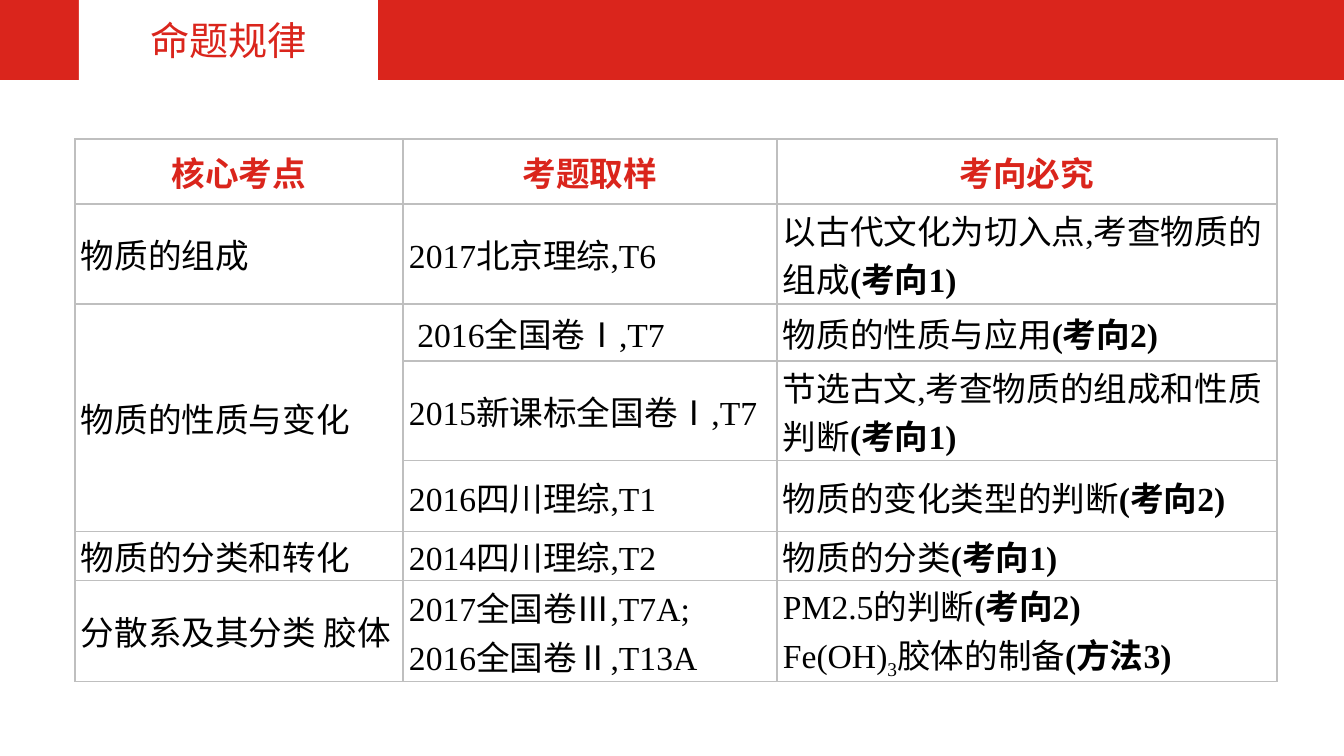
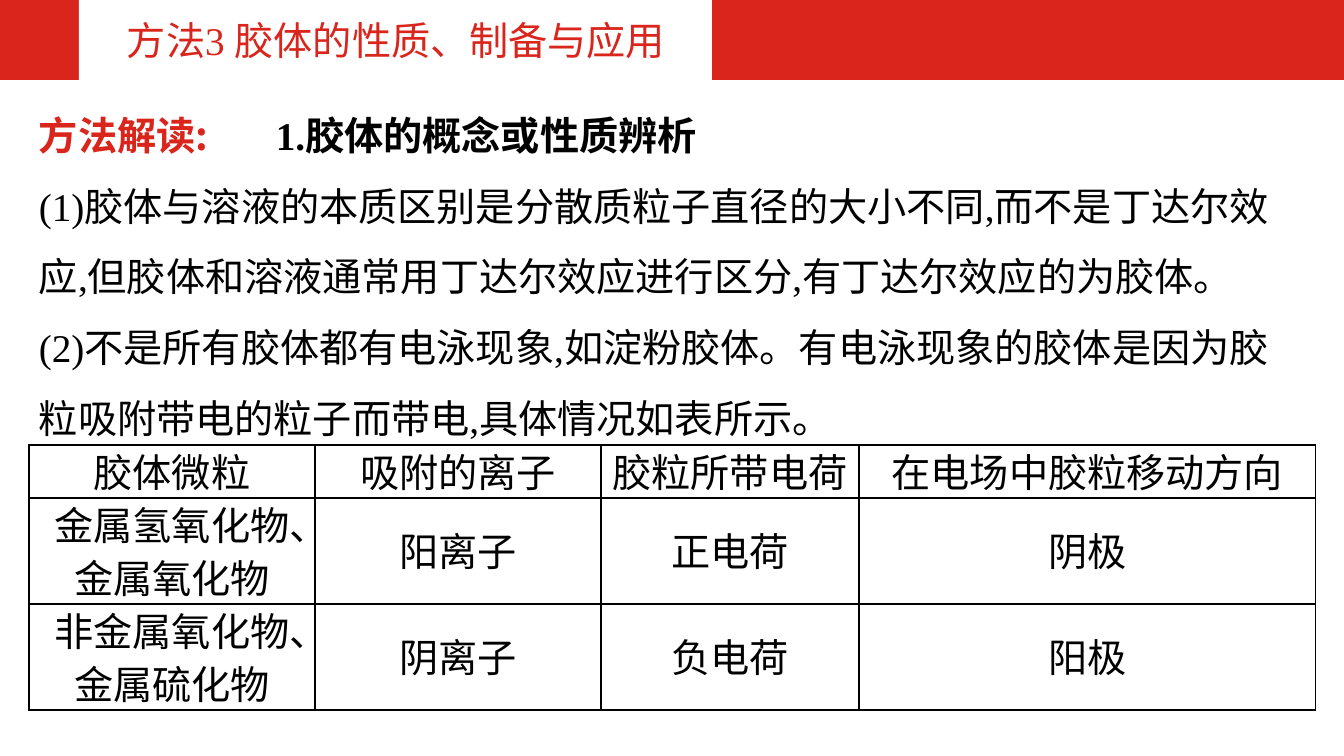
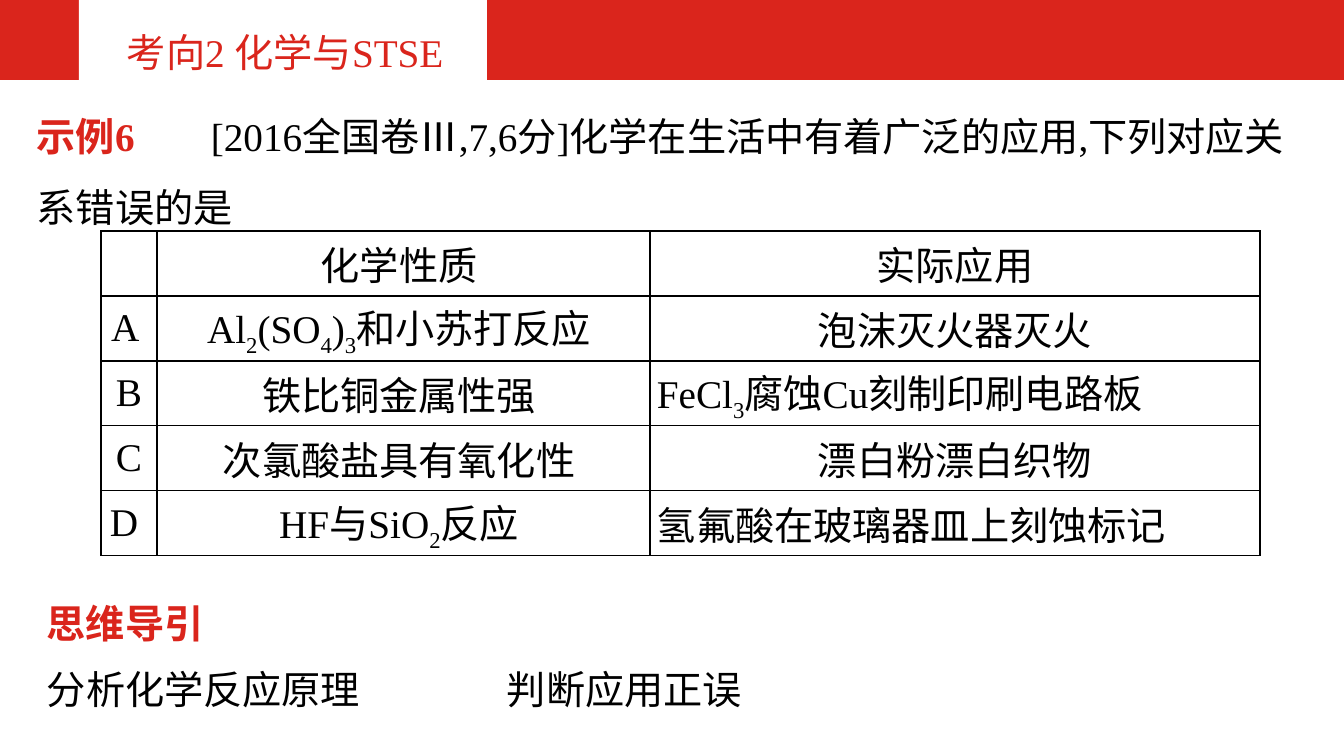
import itertools
import pptx
import pptx.util
import pptx.dml.color
import pptx.enum.shapes
import pptx.enum.text
import pptx.oxml
import pptx.oxml.ns

RED = pptx.dml.color.RGBColor(0xDA, 0x25, 0x1C)
WHITE = pptx.dml.color.RGBColor(0xFF, 0xFF, 0xFF)
BLACK = pptx.dml.color.RGBColor(0, 0, 0)
GRAY = pptx.dml.color.RGBColor(0xBF, 0xBF, 0xBF)
SERIF, SANS = "Times New Roman", "Noto Sans CJK SC"
WIDE, HIGH, BAND, TAB = 1344, 756, 80, 79
SCALE = 12192000 / WIDE
ALIGN = pptx.enum.text.PP_ALIGN
MID = pptx.enum.text.MSO_ANCHOR.MIDDLE

# Content. Marks in text: * bold, ^ red, ~ subscript, # sans font.
TOPICS = [
    ["#^*核心考点*^#", "#^*考题取样*^#", "#^*考向必究*^#"],
    ["物质的组成", "2017北京理综,T6", "以古代文化为切入点,考查物质的组成*(考向1)*"],
    ["物质的性质与变化", " 2016全国卷Ⅰ,T7", "物质的性质与应用*(考向2)*"],
    [None, "2015新课标全国卷Ⅰ,T7", "节选古文,考查物质的组成和性质判断*(考向1)*"],
    [None, "2016四川理综,T1", "物质的变化类型的判断*(考向2)*"],
    ["物质的分类和转化", "2014四川理综,T2", "物质的分类*(考向1)*"],
    ["分散系及其分类 胶体", "2017全国卷Ⅲ,T7A;\n2016全国卷Ⅱ,T13A",
     "PM2.5的判断*(考向2)*\nFe(OH)~3~胶体的制备*(方法3)*"],
]
METHOD = """#^*方法解读:*^#\t*1.胶体的概念或性质辨析*
(1)胶体与溶液的本质区别是分散质粒子直径的大小不同,而不是丁达尔效应,但胶体和溶液通常用丁达尔效应进行区分,有丁达尔效应的为胶体。
(2)不是所有胶体都有电泳现象,如淀粉胶体。有电泳现象的胶体是因为胶粒吸附带电的粒子而带电,具体情况如表所示。"""
CHARGES = [
    ["胶体微粒", "吸附的离子", "胶粒所带电荷", "在电场中胶粒移动方向"],
    ["金属氢氧化物、金属氧化物", "阳离子", "正电荷", "阴极"],
    ["非金属氧化物、金属硫化物", "阴离子", "负电荷", "阳极"],
]
SAMPLE = "^*示例6*^\t[2016全国卷Ⅲ,7,6分]化学在生活中有着广泛的应用,下列对应关系错误的是"
USES = [
    ["", "化学性质 ", "实际应用"],
    ["A ", "Al~2~(SO~4~)~3~和小苏打反应 ", "泡沫灭火器灭火"],
    ["B", "铁比铜金属性强 ", "FeCl~3~腐蚀Cu刻制印刷电路板"],
    ["C", "次氯酸盐具有氧化性 ", "漂白粉漂白织物"],
    ["D ", "HF与SiO~2~反应 ", "氢氟酸在玻璃器皿上刻蚀标记"],
]
HINTS = [
    ("^*思维导引*^", (37, 571, 219, 73), 1.5),
    ("#分析化学反应原理#", (37, 660, 350, 58), None),
    ("#判断应用正误#", (497, 660, 270, 58), None),
]


def px(num):
    return pptx.util.Emu(round(num * SCALE))


def make(xml):
    return pptx.oxml.parse_xml(xml.replace(" ", " " + pptx.oxml.ns.nsdecls("a") + " ", 1))


# Text
def write(frame, text, size=28, align=None, space=None, stop=None):
    for num, line in enumerate(text.split("\n")):
        para = frame.add_paragraph() if num else frame.paragraphs[0]
        para.alignment, para.line_spacing = align, space
        font = para.font
        font.name, font.size = SERIF, pptx.util.Pt(size)
        font.color.rgb = BLACK
        base = para._p.pPr.find(pptx.oxml.ns.qn("a:defRPr"))
        base.find(pptx.oxml.ns.qn("a:latin")).addnext(make(f'<a:ea typeface="{SANS}"/>'))
        if stop and "\t" in line:
            base.addprevious(make('<a:tabLst ><a:tab pos="%d" algn="l"/></a:tabLst>' % px(stop)))
        marks = set()
        for mark, part in itertools.groupby(line, lambda c: c if c in "*^~#" else ""):
            if mark:
                marks ^= {mark}
                continue
            run = para.add_run()
            run.text = "".join(part)
            if "*" in marks:
                run.font.bold = True
            if "^" in marks:
                run.font.color.rgb = RED
            if "#" in marks:
                run.font.name = SANS
            if "~" in marks:
                run._r.get_or_add_rPr().set("baseline", "-25000")


def note(slide, text, box, space=None, stop=None):
    frame = slide.shapes.add_textbox(*map(px, box)).text_frame
    frame.word_wrap = True
    write(frame, text, space=space, stop=stop)


# Shared header
def rect(slide, left, width, fill):
    kind = pptx.enum.shapes.MSO_SHAPE.RECTANGLE
    shape = slide.shapes.add_shape(kind, px(left), 0, px(width), px(BAND))
    shape.shadow.inherit = False
    shape.fill.solid()
    shape.fill.fore_color.rgb = fill
    shape.line.fill.background()
    return shape


def start(deck, title, width, inset=38, align=ALIGN.LEFT, space=None):
    slide = deck.slides.add_slide(deck.slide_layouts[6])
    rect(slide, 0, WIDE, RED)
    if inset:
        rect(slide, TAB, inset, WHITE)
    frame = rect(slide, TAB + inset, width, WHITE).text_frame
    frame.word_wrap, frame.vertical_anchor = True, MID
    write(frame, f"^{title}^", align=align, space=space)
    return slide


# Tables
def grid(slide, data, left, top, cols, rows, line, pad, left_cells=(), size=28, space=None):
    table = slide.shapes.add_table(len(rows), len(cols), px(left), px(top),
                                   px(sum(cols)), px(sum(rows))).table
    table.first_row = table.horz_banding = False
    for col, width in zip(table.columns, cols):
        col.width = px(width)
    for row, height in zip(table.rows, rows):
        row.height = px(height)
    for r, c in itertools.product(range(len(rows)), range(len(cols))):
        cell = table.cell(r, c)
        cell.vertical_anchor = MID
        cell.margin_left = cell.margin_right = px(pad)
        cell.margin_top = cell.margin_bottom = 0
        cell.fill.background()
        for num, side in enumerate("LRTB"):
            edge = make(f'<a:ln{side} w="12700"><a:solidFill><a:srgbClr val="{line}"/>'
                        f'</a:solidFill></a:ln{side}>')
            cell._tc.get_or_add_tcPr().insert(num, edge)
        if data[r][c]:
            align = ALIGN.LEFT if (r, c) in left_cells else ALIGN.CENTER
            write(cell.text_frame, data[r][c], size, align, space)
    return table


def main():
    deck = pptx.Presentation()
    deck.slide_width, deck.slide_height = px(WIDE), px(HIGH)

    # Topic overview
    slide = start(deck, "命题规律", 299, 0, ALIGN.CENTER)
    body = set(itertools.product(range(1, 7), range(3)))
    table = grid(slide, TOPICS, 75, 139, [328, 374, 500],
                 [65, 100, 57, 100, 71, 49, 100], GRAY, 6, body, 24)
    table.cell(2, 0).merge(table.cell(4, 0))

    # Colloid method
    slide = start(deck, "方法3 胶体的性质、制备与应用", 595)
    note(slide, METHOD, (29, 83, 1287, 367), 1.5, 237)
    grid(slide, CHARGES, 29, 445, [286, 286, 258, 457], [53, 106, 106],
         BLACK, 7, space=0.93)

    # Worked example
    slide = start(deck, "考向2 化学与STSE", 370, space=1.5)
    note(slide, SAMPLE, (27, 84, 1292, 216), 1.5, 174)
    grid(slide, USES, 101, 231, [56, 493, 610], [65] * 5, BLACK, 7, {(2, 2), (4, 2)})
    for text, box, space in HINTS:
        note(slide, text, box, space)

    deck.save("out.pptx")


if __name__ == "__main__":
    main()
